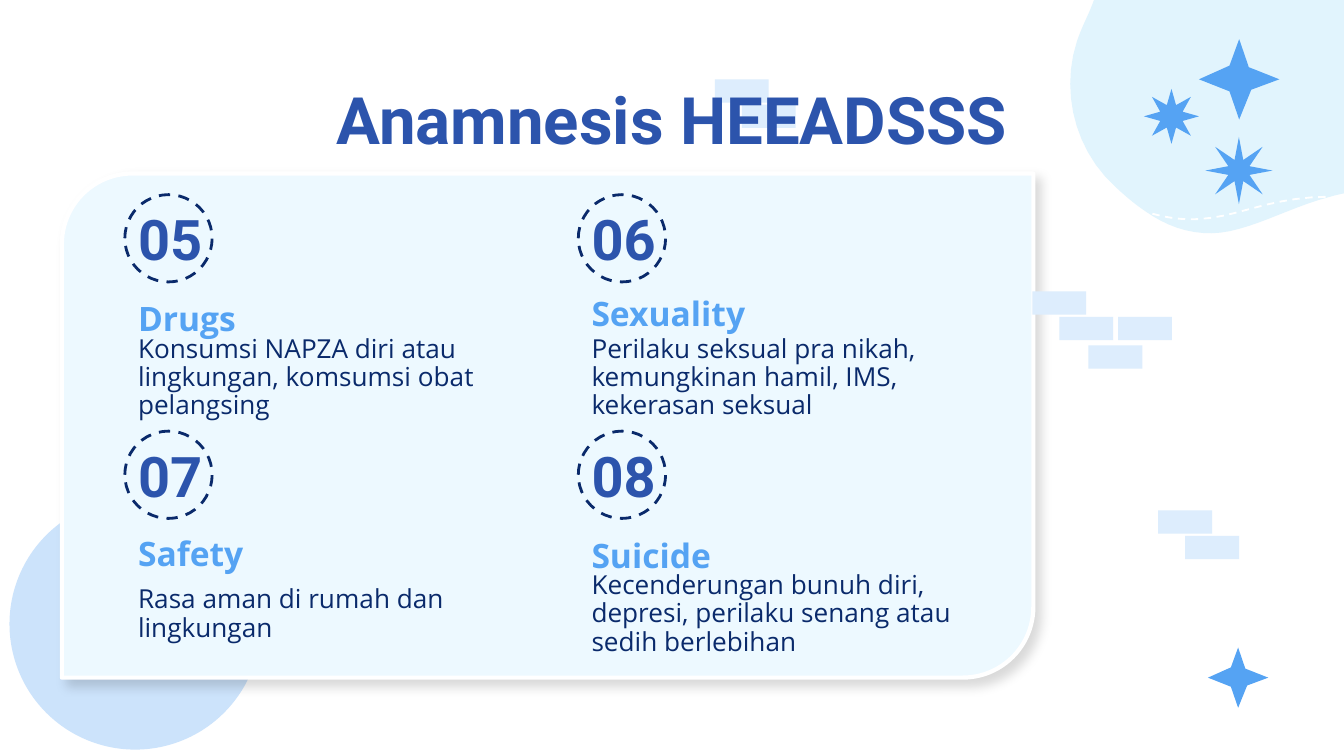
"""Build the Anamnesis HEEADSSS slide with items 05 to 08."""
from lxml.etree import SubElement
from pptx import Presentation
from pptx.dml.color import RGBColor
from pptx.enum.dml import MSO_LINE
from pptx.enum.shapes import MSO_SHAPE as Shape
from pptx.enum.text import MSO_ANCHOR as Anchor, MSO_AUTO_SIZE as AutoSize, PP_ALIGN as Align
from pptx.oxml.ns import qn
from pptx.util import Cm, Pt

WHITE = RGBColor(0xFF, 0xFF, 0xFF)
NAVY = RGBColor(0x0A, 0x2A, 0x6B)
BLUE = RGBColor(0x2C, 0x54, 0xAC)
SKY = RGBColor(0x55, 0xA3, 0xF3)
PALE = RGBColor(0xDD, 0xED, 0xFD)
PANEL = RGBColor(0xED, 0xF9, 0xFF)
DISC = RGBColor(0xCC, 0xE3, 0xFB)
BLOB = RGBColor(0xE1, 0xF4, 0xFD)

TITLE = "Anamnesis HEEADSSS"
ITEMS = [
    ("05", "Drugs", "Konsumsi NAPZA diri atau lingkungan, komsumsi obat pelangsing", 6.01),
    ("06", "Sexuality", "Perilaku seksual pra nikah, kemungkinan hamil, IMS, kekerasan seksual", 5.92),
    ("07", "Safety", "Rasa aman di rumah dan lingkungan", 10.46),
    ("08", "Suicide", "Kecenderungan bunuh diri, depresi, perilaku senang atau sedih berlebihan", 10.49),
]
COLUMNS = [2.36, 10.93]
ROW_STEP = 4.47
HEADING_HEIGHT = 0.98

BRICKS = [(22.4, 10.13), (21.89, 9.65), (14.02, 1.98), (13.51, 1.5),
          (21.13, 5.99), (20.02, 5.99), (20.57, 6.53), (19.51, 5.51)]
BURSTS = [(22.78, 2.59, 1.27, 0.17), (21.62, 1.68, 1.04, 0.22)]
SPARKLES = [(22.66, 0.74, 1.52), (22.83, 12.24, 1.14)]
SPARKLE_POINTS = [(0.5, 0), (0.38, 0.33), (0, 0.5), (0.38, 0.65),
                  (0.5, 1), (0.65, 0.63), (1, 0.5), (0.62, 0.35)]
BLOB_START = (27.2, -4.24)
BLOB_CURVES = [
    ((27.79, -4.24), (28.35, -3.99), (28.73, -3.56)),
    ((28.8, -3.48), (28.87, -3.38), (28.93, -3.28)),
    ((29.31, -2.72), (29.41, -2.01), (29.31, -1.35)),
    ((29.24, -0.86), (29.08, -0.41), (29.13, 0.08)),
    ((29.18, 0.35), (29.31, 0.66), (29.41, 0.97)),
    ((29.64, 1.68), (29.44, 2.46), (28.96, 3)),
    ((28.65, 3.35), (28.22, 3.6), (27.71, 3.66)),
    ((27.28, 3.73), (26.82, 3.61), (26.39, 3.61)),
    ((25.95, 3.56), (25.5, 3.61), (25.1, 3.73)),
    ((24.45, 3.9), (23.85, 4.24), (23.24, 4.37)),
    ((22.67, 4.49), (22.12, 4.33), (21.64, 3.99)),
    ((21.36, 3.8), (21.11, 3.57), (20.88, 3.33)),
    ((20.27, 2.64), (20.07, 1.65), (20.35, 0.79)),
    ((20.45, 0.48), (20.62, 0.2), (20.7, -0.08)),
    ((20.75, -0.23), (20.75, -0.38), (20.75, -0.56)),
    ((20.75, -1.37), (20.22, -2.24), (20.6, -3)),
    ((20.8, -3.5), (21.3, -3.85), (21.87, -3.96)),
    ((22.5, -4.1), (23.2, -4), (23.75, -3.86)),
    ((24.18, -3.73), (24.74, -3.48), (25.22, -3.48)),
    ((25.9, -3.48), (26.2, -4.24), (27.2, -4.24)),
]
STITCH_START = (21.78, 4.04)
STITCH_CURVES = [
    ((22.1, 4.13), (22.4, 4.16), (22.68, 4.14)),
    ((23.4, 4.1), (24, 3.73), (25.08, 3.72)),
]


def sample_curves(start, curves, steps=10):
    """Return points along a chain of cubic curves."""
    points = [start]
    for first, second, end in curves:
        origin = points[-1]
        for step in range(1, steps + 1):
            t = step / steps
            weights = ((1 - t) ** 3, 3 * t * (1 - t) ** 2, 3 * t * t * (1 - t), t ** 3)
            points.append(tuple(sum(w * p[axis] for w, p in zip(weights, (origin, first, second, end)))
                                for axis in (0, 1)))
    return points


def style(shape, fill=None, line=None, line_width=1, dashed=False):
    """Set the fill and outline of a shape and drop its shadow."""
    shape.shadow.inherit = False
    if fill is None:
        shape.fill.background()
    else:
        shape.fill.solid()
        shape.fill.fore_color.rgb = fill
    if line is None:
        shape.line.fill.background()
    else:
        shape.line.color.rgb = line
        shape.line.width = Pt(line_width)
        if dashed:
            shape.line.dash_style = MSO_LINE.DASH
    return shape


def add_preset(slide, kind, left, top, width, height, **look):
    """Add a styled preset shape."""
    shape = slide.shapes.add_shape(kind, Cm(left), Cm(top), Cm(width), Cm(height))
    return style(shape, **look)


def add_outline(slide, points, close=True, **look):
    """Add a styled freeform through the given points."""
    (x, y), *rest = [(Cm(x), Cm(y)) for x, y in points]
    builder = slide.shapes.build_freeform(x, y)
    builder.add_line_segments(rest, close=close)
    return style(builder.convert_to_shape(), **look)


def add_panel_shadow(shape):
    """Give the panel a soft shadow to the lower right."""
    effects = shape._element.spPr.find(qn("a:effectLst"))
    shadow = SubElement(effects, qn("a:outerShdw"), blurRad=str(Pt(5.6)), dist=str(Pt(4.5)),
                        dir=str(44 * 60000), algn="bl", rotWithShape="0")
    color = SubElement(shadow, qn("a:srgbClr"), val="000000")
    SubElement(color, qn("a:alpha"), val="15000")


def write(shape, text, size, font, color, bold=True, anchor=Anchor.MIDDLE,
          align=Align.LEFT, spacing=1.0):
    """Write one formatted paragraph into a shape."""
    frame = shape.text_frame
    frame.text = text
    frame.word_wrap = True
    frame.auto_size = AutoSize.NONE
    frame.vertical_anchor = anchor
    frame.margin_left = frame.margin_right = frame.margin_top = frame.margin_bottom = Cm(0.25)
    paragraph = frame.paragraphs[0]
    paragraph.alignment = align
    paragraph.line_spacing = spacing
    run_font = paragraph.runs[0].font
    run_font.size, run_font.name, run_font.bold = Pt(size), font, bold
    run_font.color.rgb = color


def add_text(slide, left, top, width, height, *args, **options):
    """Add a text box with one formatted paragraph."""
    box = slide.shapes.add_textbox(Cm(left), Cm(top), Cm(width), Cm(height))
    write(box, *args, **options)


def add_background(slide):
    """Add the blob, the disc and the panel."""
    add_outline(slide, sample_curves(BLOB_START, BLOB_CURVES), fill=BLOB)
    add_outline(slide, sample_curves(STITCH_START, STITCH_CURVES), close=False,
                line=WHITE, dashed=True)
    add_preset(slide, Shape.OVAL, 0.18, 9.42, 4.75, 4.75, fill=DISC)
    panel = add_preset(slide, Shape.ROUND_2_DIAG_RECTANGLE, 1.17, 3.28, 18.36, 9.53,
                       fill=PANEL, line=WHITE, line_width=2.25)
    panel.adjustments[0], panel.adjustments[1] = 0.14, 0
    add_panel_shadow(panel)


def add_decorations(slide):
    """Add the bricks, bursts and sparkles."""
    for left, top in BRICKS:
        add_preset(slide, Shape.RECTANGLE, left, top, 1.02, 0.44, fill=PALE)
    for left, top, size, depth in BURSTS:
        add_preset(slide, Shape.STAR_8_POINT, left, top, size, size, fill=SKY).adjustments[0] = depth
    for left, top, size in SPARKLES:
        add_outline(slide, [(left + x * size, top + y * size) for x, y in SPARKLE_POINTS], fill=SKY)


def add_items(slide):
    """Add the numbered items in two columns."""
    for index, (number, heading, body, heading_middle) in enumerate(ITEMS):
        row, column = divmod(index, len(COLUMNS))
        left, shift = COLUMNS[column], row * ROW_STEP
        add_preset(slide, Shape.OVAL, left, 3.68 + shift, 1.65, 1.65,
                   line=NAVY, line_width=1.5, dashed=True)
        add_text(slide, left, 3.96 + shift, 3.7, 1.09, number, 30, "Roboto", BLUE)
        add_text(slide, left, heading_middle - HEADING_HEIGHT / 2, 7.4, HEADING_HEIGHT,
                 heading, 18, "Open Sans", SKY)
        add_text(slide, left, 6.32 + shift, 7.4, 1.65, body, 14, "Open Sans", NAVY,
                 bold=False, spacing=0.9)


def main():
    """Assemble and save the slide."""
    presentation = Presentation()
    presentation.slide_width, presentation.slide_height = Cm(25.4), Cm(14.29)
    slide = presentation.slides.add_slide(presentation.slide_layouts[5])
    add_background(slide)
    add_decorations(slide)
    add_items(slide)
    title = slide.shapes.title
    title.left, title.top, title.width, title.height = Cm(1.98), Cm(1.24), Cm(21.44), Cm(1.6)
    write(title, TITLE, 35, "Roboto", BLUE, anchor=Anchor.TOP, align=Align.CENTER)
    slide.shapes._spTree.append(title._element)
    presentation.save("out.pptx")


if __name__ == "__main__":
    main()
